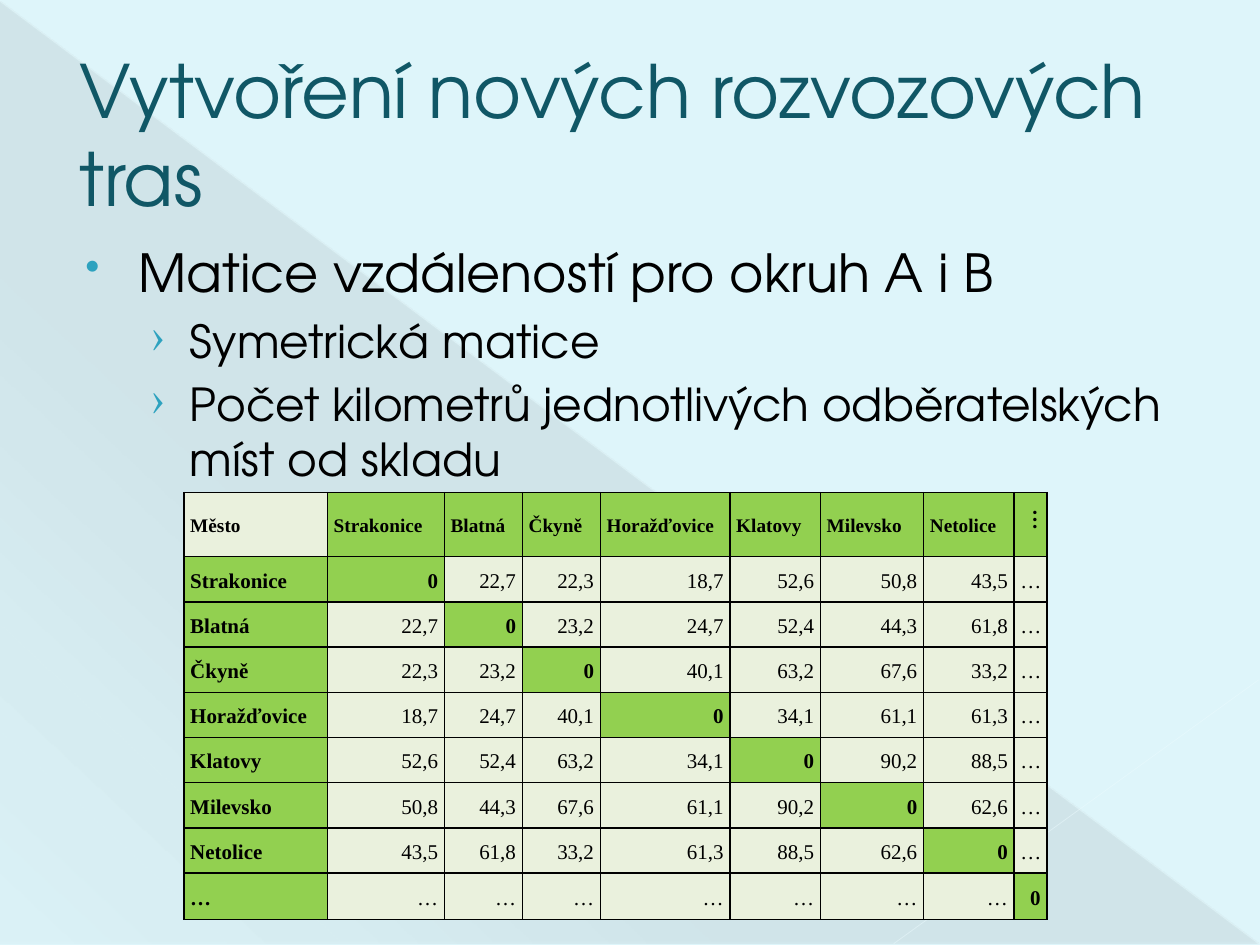
import dataclasses
import lxml.etree as et
import pptx
import pptx.dml.color
import pptx.enum.dml
import pptx.enum.shapes
import pptx.enum.text
import pptx.oxml.ns
import pptx.util

Pt = pptx.util.Pt
qn = pptx.oxml.ns.qn
Align = pptx.enum.text.PP_ALIGN
Mid = pptx.enum.text.MSO_ANCHOR.MIDDLE
UNIT = pptx.util.Inches(0.1)
COLS, ROWS = 100, 75


@dataclasses.dataclass(frozen=True)
class Theme:
    back: str = "DEF5FA"
    shade: str = "464646"
    rays: tuple = ("EBFBFF", "EDFCFF")
    head: str = "105766"
    edge: str = "1F7084"
    ink: str = "000000"
    mark: str = "2DA2BF"
    green: str = "92D050"
    pale: str = "EAF1DD"
    sans: str = "TeX Gyre Adventor"
    serif: str = "Times New Roman"
    title: int = 42
    main: int = 30
    sub: int = 26
    label: int = 11
    value: int = 12


THEME = Theme()
TOWNS = ["Strakonice", "Blatná", "Čkyně", "Horažďovice", "Klatovy", "Milevsko", "Netolice"]
ABOVE = [
    "22,7 22,3 18,7 52,6 50,8 43,5",
    "23,2 24,7 52,4 44,3 61,8",
    "40,1 63,2 67,6 33,2",
    "34,1 61,1 61,3",
    "90,2 88,5",
    "62,6",
]
KM = [line.split() for line in ABOVE]
WIDTHS = [1.14, 0.93, 0.62, 0.62, 1.03, 0.72, 0.82, 0.72, 0.26]
HEIGHTS = [0.51] + [0.36] * 7 + [0.37]


def grid(*vals):
    return [round(v * UNIT) for v in vals]


def rgb(code):
    return pptx.dml.color.RGBColor.from_string(code)


def apply(item, form):
    for name, val in form.items():
        setattr(item, name, val)


def add(root, tag, **attrs):
    return et.SubElement(root, qn(tag), attrs)


def tint(root, code, alpha=100):
    clr = add(root, "a:srgbClr", val=code)
    if alpha < 100:
        add(clr, "a:alpha", val=str(alpha * 1000))


def outline(tag, code, width):
    line = et.Element(qn(tag), w=str(int(Pt(width))))
    tint(add(line, "a:solidFill"), code)
    return line


def style(font, face, size, code, bold=False):
    apply(font, {"name": face, "size": Pt(size), "bold": bold})
    font.color.rgb = rgb(code)


def inset(para, left, hang=0):
    props = para._p.get_or_add_pPr()
    props.set("marL", str(pptx.util.Inches(left)))
    props.set("indent", str(pptx.util.Inches(hang)))
    return props


def ray(slide, box, ends, code, width, alpha):
    x, y, w, h = box
    pts = [(x + u * w, y + v * h) for u, v in ends]
    line = slide.shapes.add_connector(
        pptx.enum.shapes.MSO_CONNECTOR.STRAIGHT, *grid(*pts[0], *pts[1]))
    line.line.width = Pt(width)
    line.line.color.rgb = rgb(code)
    clr = line._element.spPr.find(".//" + qn("a:srgbClr"))
    add(clr, "a:alpha", val=str(alpha * 1000))
    add(line._element.spPr, "a:effectLst")


def decor(slide, box):
    fill = slide.background.fill
    fill.solid()
    fill.fore_color.rgb = rgb(THEME.back)
    shape = slide.shapes.add_shape(
        pptx.enum.shapes.MSO_SHAPE.RIGHT_TRIANGLE, *grid(*box))
    shape.shadow.inherit = False
    shape.line.fill.background()
    grad = et.Element(qn("a:gradFill"), rotWithShape="1")
    stops = add(grad, "a:gsLst")
    for pos, alpha in [(0, 10), (70, 8), (100, 1)]:
        tint(add(stops, "a:gs", pos=str(pos * 1000)), THEME.shade, alpha)
    add(grad, "a:lin", ang=str(133 * 60000), scaled="0")
    shape._element.spPr.find(qn("a:prstGeom")).addnext(grad)
    ray(slide, box, [(0, 0), (1, 1)], THEME.rays[0], 0.39, 35)
    ray(slide, box, [(1, 0.72), (0.71, 1)], THEME.rays[1], 0.47, 45)


def title(slide, box, text):
    frame = slide.shapes.add_textbox(*grid(*box)).text_frame
    apply(frame, {"word_wrap": True, "vertical_anchor": Mid})
    para = frame.paragraphs[0]
    inset(para, 0.53)
    run = para.add_run()
    run.text = text
    style(run.font, THEME.sans, THEME.title, THEME.head)
    run._r.get_or_add_rPr().insert(0, outline("a:ln", THEME.edge, 0.5))


def body(slide, box, items):
    frame = slide.shapes.add_textbox(*grid(*box)).text_frame
    frame.word_wrap = True
    kinds = [(0.49, -0.42, "•", 80, THEME.main), (0.9, -0.31, "›", 95, THEME.sub)]
    for i, (level, text) in enumerate(items):
        para = frame.add_paragraph() if i else frame.paragraphs[0]
        left, hang, sign, share, size = kinds[level]
        apply(para, {"level": level, "space_before": Pt(0.2 * size if i else 0)})
        props = inset(para, left, hang)
        tint(add(props, "a:buClr"), THEME.mark)
        add(props, "a:buSzPct", val=str(share * 1000))
        add(props, "a:buChar", char=sign)
        run = para.add_run()
        run.text = text
        style(run.font, THEME.sans, size, THEME.ink)


def entry(row, col):
    names = ["Město"] + TOWNS + ["…"]
    if row == 0 or col == 0:
        return names[row + col]
    if row == col:
        return "0"
    low, high = sorted((row, col))
    return "…" if high == len(names) - 1 else KM[low - 1][high - low - 1]


def matrix(slide, box):
    x, y, w, h = box
    last = len(WIDTHS) - 1
    table = slide.shapes.add_table(last + 1, last + 1, *grid(*box)).table
    apply(table, {"first_row": False, "horz_banding": False})
    for col, part in zip(table.columns, WIDTHS):
        col.width = round(w * UNIT * part / sum(WIDTHS))
    for row, part in zip(table.rows, HEIGHTS):
        row.height = round(h * UNIT * part / sum(HEIGHTS))
    side = pptx.util.Inches(0.05)
    form = {"margin_left": side, "margin_right": side, "margin_top": 0,
            "margin_bottom": 0, "vertical_anchor": Mid}
    for i in range(last + 1):
        for j in range(last + 1):
            cell = table.cell(i, j)
            apply(cell, form)
            strong = i == 0 or j == 0 or i == j
            cell.fill.solid()
            cell.fill.fore_color.rgb = rgb(THEME.green if strong and i + j else THEME.pale)
            props = cell._tc.get_or_add_tcPr()
            for k, tag in enumerate(["a:lnL", "a:lnR", "a:lnT", "a:lnB"]):
                props.insert(k, outline(tag, THEME.ink, 1))
            para = cell.text_frame.paragraphs[0]
            look = {"line_spacing": 1.15,
                    "alignment": Align.RIGHT if i and j else Align.LEFT}
            if i and last in (i, j):
                look["space_after"] = Pt(10)
            if i == 0 and j == last:
                props.set("vert", "vert270")
                inset(para, 0.08)
                look["alignment"] = Align.CENTER
            apply(para, look)
            run = para.add_run()
            run.text = entry(i, j)
            size = THEME.label if i == 0 and j < last else THEME.value
            style(run.font, THEME.serif, size, THEME.ink, strong)


def main():
    deck = pptx.Presentation()
    apply(deck, {"slide_width": COLS * UNIT, "slide_height": ROWS * UNIT})
    slide = deck.slides.add_slide(deck.slide_layouts[6])
    decor(slide, (0, 0.1, COLS - 0.1, ROWS - 0.2))
    title(slide, (0, 2.9, COLS, 15.3), "Vytvoření nových rozvozových tras")
    body(slide, (5.1, 18.6, 90, 50), [
        (0, "Matice vzdáleností pro okruh A i B"),
        (1, "Symetrická matice"),
        (1, "Počet kilometrů jednotlivých odběratelských míst od skladu"),
    ])
    matrix(slide, (14.6, 39.1, 68.5, 33.9))
    deck.save("out.pptx")


if __name__ == "__main__":
    main()
